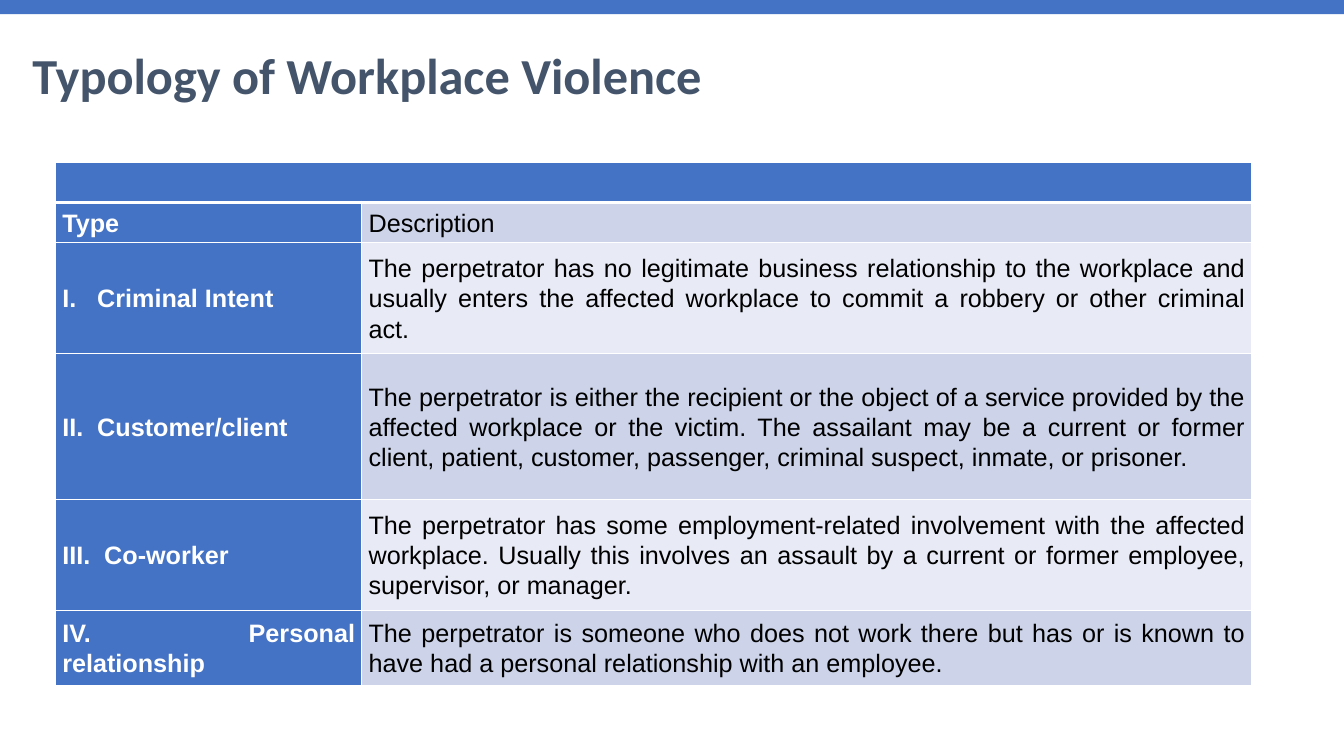
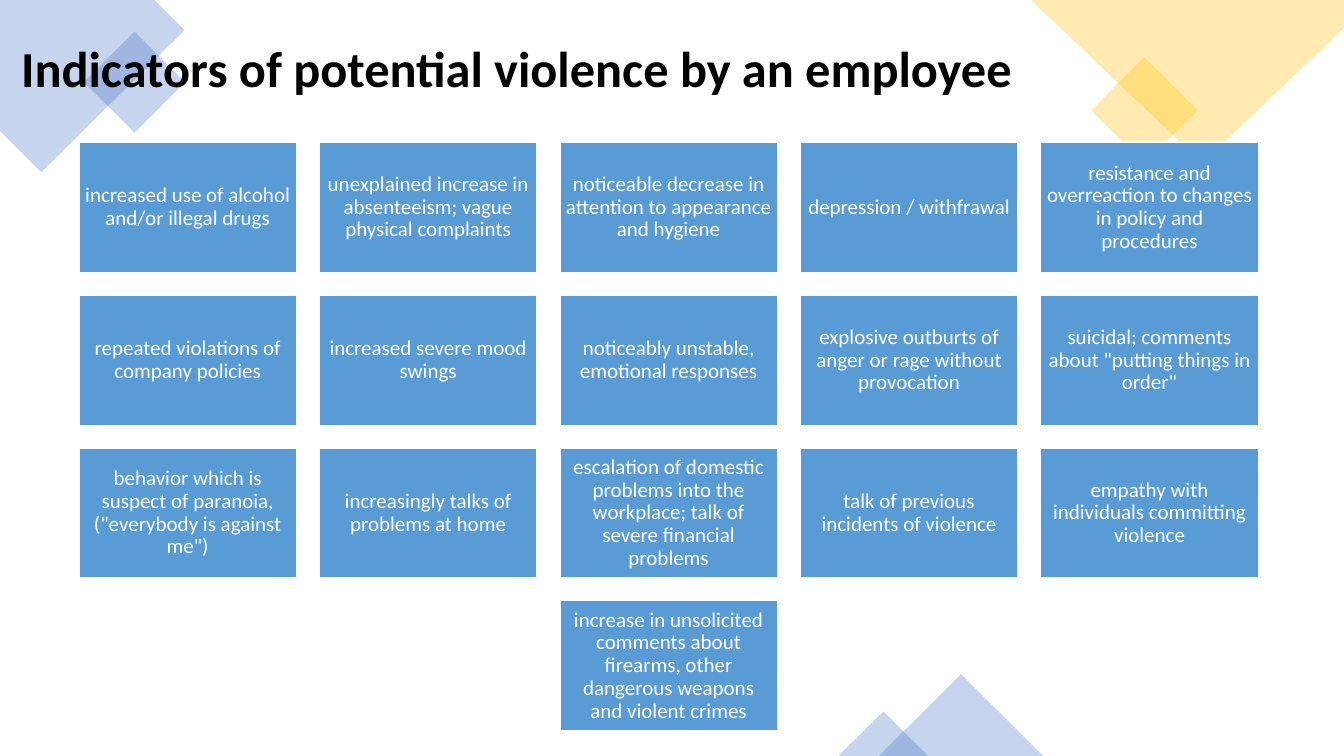
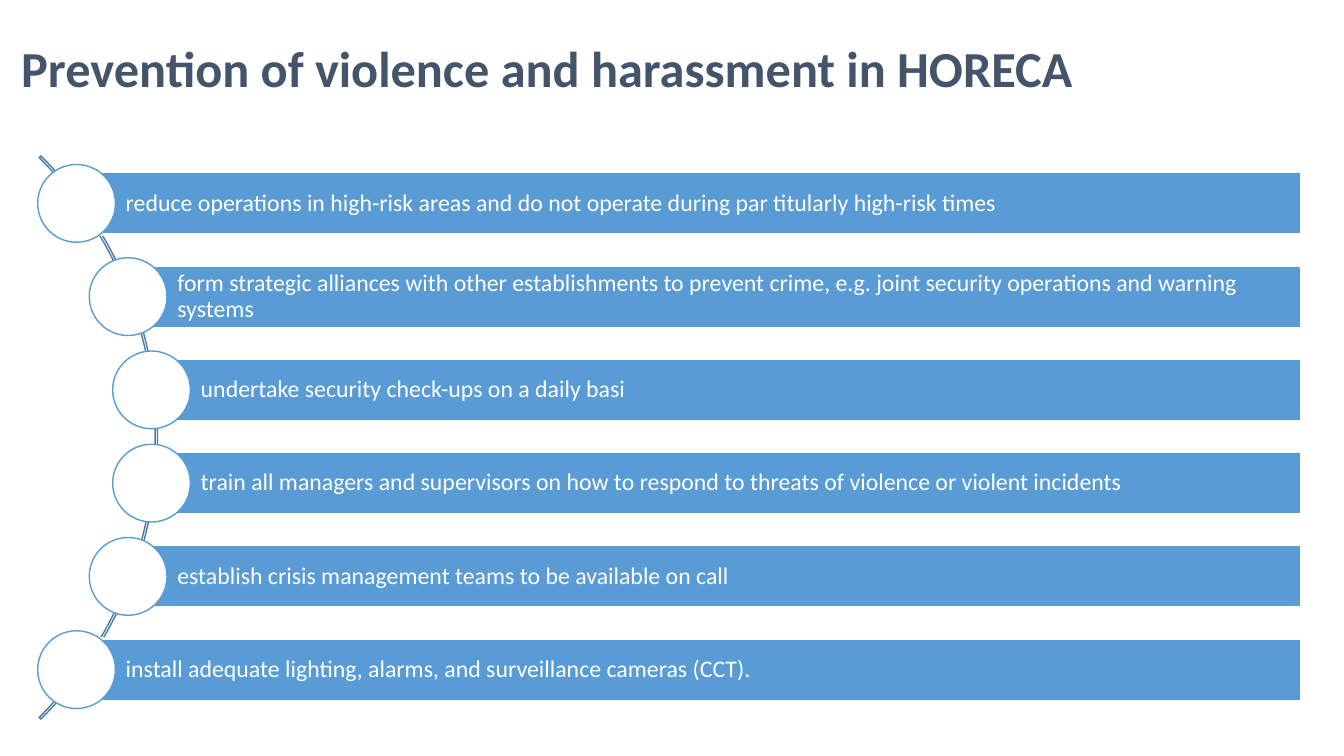
from lxml.etree import SubElement
from pptx import Presentation
from pptx.dml.color import RGBColor
from pptx.enum.shapes import MSO_SHAPE as Preset
from pptx.enum.text import MSO_ANCHOR as Anchor, MSO_AUTO_SIZE as AutoSize, PP_ALIGN as Align
from pptx.oxml.ns import qn
from pptx.util import Cm, Pt

BLUE = RGBColor(0x44, 0x72, 0xC4)
SKY = RGBColor(0x59, 0x9B, 0xD5)
STEEL = RGBColor(0x48, 0x7A, 0xA8)
SLATE = RGBColor(0x44, 0x54, 0x6A)
GOLD = RGBColor(0xFF, 0xC0, 0x00)
BAND_DARK = RGBColor(0xCD, 0xD4, 0xEA)
BAND_LIGHT = RGBColor(0xE8, 0xEB, 0xF5)
BLACK = RGBColor(0, 0, 0)
WHITE = RGBColor(0xFF, 0xFF, 0xFF)
SLIDE_W, SLIDE_H = 33.87, 19.05


def write(frame, text, size, color=WHITE, bold=False, font="Calibri", align=Align.LEFT, spacing=0.9):
    """Fill a text frame with one formatted paragraph."""
    frame.word_wrap = True
    paragraph = frame.paragraphs[0]
    paragraph.alignment = align
    paragraph.line_spacing = spacing
    run = paragraph.add_run()
    run.text = text
    run.font.name = font
    run.font.size = Pt(size)
    run.font.bold = bold
    run.font.color.rgb = color


def paint(shape, fill=None, line=None, width=1, opacity=100):
    """Set fill, outline and fill opacity (percent) and drop the shadow."""
    shape.shadow.inherit = False
    if fill is None:
        shape.fill.background()
    else:
        shape.fill.solid()
        shape.fill.fore_color.rgb = fill
    if opacity < 100:
        fill_color = shape._element.spPr.find(qn("a:solidFill"))[0]
        SubElement(fill_color, qn("a:alpha"), val=str(opacity * 1000))
    if line is None:
        shape.line.fill.background()
    else:
        shape.line.color.rgb = line
        shape.line.width = Pt(width)


deck = Presentation()
deck.slide_width, deck.slide_height = Cm(SLIDE_W), Cm(SLIDE_H)

# Titles
TITLE_BOX = (0.28, 0.23, 30.07, 3.12)
slides = []
for text, color, box, anchor in [
    ("Typology of Workplace Violence", SLATE, (0.56, 0.81, 30.99, 1.98), Anchor.BOTTOM),
    ("Indicators of potential violence by an employee", BLACK, TITLE_BOX, Anchor.MIDDLE),
    ("Prevention of violence and harassment in HORECA", SLATE, TITLE_BOX, Anchor.MIDDLE),
]:
    slide = deck.slides.add_slide(deck.slide_layouts[5])
    title = slide.shapes.title
    title.left, title.top, title.width, title.height = map(Cm, box)
    title.text_frame.auto_size = AutoSize.NONE
    title.text_frame.vertical_anchor = anchor
    write(title.text_frame, text, 36, color, bold=True)
    slides.append(slide)
typology, indicators, prevention = slides

# Typology: top band and table
top_band = typology.shapes.add_shape(Preset.RECTANGLE, 0, 0, Cm(SLIDE_W), Cm(0.36))
paint(top_band, BLUE)

types = [
    ("", "", 1.02),
    ("Type", "Description", 1.02),
    ("I.   Criminal Intent",
     "The perpetrator has no legitimate business relationship to the workplace and usually "
     "enters the affected workplace to commit a robbery or other criminal act.", 2.79),
    ("II.  Customer/client",
     "The perpetrator is either the recipient or the object of a service provided by the affected "
     "workplace or the victim. The assailant may be a current or former client, patient, customer, "
     "passenger, criminal suspect, inmate, or prisoner.", 3.68),
    ("III.  Co-worker",
     "The perpetrator has some employment-related involvement with the affected workplace. Usually "
     "this involves an assault by a current or former employee, supervisor, or manager.", 2.79),
    ("IV.  Personal relationship",
     "The perpetrator is someone who does not work there but has or is known to have had a personal "
     "relationship with an employee.", 1.9),
]
column_widths = (7.72, 22.43)
table = typology.shapes.add_table(
    len(types), 2, Cm(1.4), Cm(4.08), Cm(sum(column_widths)), Cm(sum(row[2] for row in types))
).table
for column, width in zip(table.columns, column_widths):
    column.width = Cm(width)

for r, (kind, description, height) in enumerate(types):
    table.rows[r].height = Cm(height)
    for c, text in enumerate((kind, description)):
        cell = table.cell(r, c)
        cell.margin_left = cell.margin_right = Cm(0.17)
        cell.margin_top = cell.margin_bottom = 0
        cell.vertical_anchor = Anchor.MIDDLE
        is_head = r == 0 or c == 0
        if text:
            write(cell.text_frame, text, 18, WHITE if is_head else BLACK, bold=is_head,
                  font="Arial", align=Align.JUSTIFY, spacing=1.07)
        properties = cell._tc.get_or_add_tcPr()
        for side in "LRTB":
            under_header = (r, side) in ((0, "B"), (1, "T"))
            border = SubElement(properties, qn(f"a:ln{side}"), w=str(Pt(3 if under_header else 1)))
            SubElement(SubElement(border, qn("a:solidFill")), qn("a:srgbClr"), val=str(WHITE))
        cell.fill.solid()
        cell.fill.fore_color.rgb = BLUE if is_head else BAND_DARK if r % 2 else BAND_LIGHT
table.cell(0, 0).merge(table.cell(0, 1))

# Indicators: corner decoration
corners = [
    (BLUE, [(3.89, 0), (0, 0), (0, 3.3), (1.04, 4.34), (4.65, 0.76)]),
    (GOLD, [(SLIDE_W, 0), (25.98, 0), (30.3, 4.11), (SLIDE_W, 0.71)]),
]
for color, outline in corners:
    points = [(Cm(x), Cm(y)) for x, y in outline]
    builder = indicators.shapes.build_freeform(*points[0])
    builder.add_line_segments(points[1:], close=True)
    paint(builder.convert_to_shape(), color, opacity=30)

for preset, color, rotation, box in [
    (Preset.RECTANGLE, BLUE, 315, (2.49, 1.17, 1.8, 1.8)),
    (Preset.RECTANGLE, GOLD, 315, (27.89, 1.83, 1.9, 1.9)),
    (Preset.ISOSCELES_TRIANGLE, BLUE, 0, (22.15, 16.99, 4.14, 2.06)),
    (Preset.ISOSCELES_TRIANGLE, BLUE, 0, (21.13, 17.93, 2.26, 1.12)),
]:
    accent = indicators.shapes.add_shape(preset, *map(Cm, box))
    accent.rotation = rotation
    paint(accent, color, opacity=30)

# The title lies above the decoration
indicators.shapes._spTree.append(indicators.shapes.title._element)

# Indicators: grid of signs, the last row centred
signs = [
    "increased use of alcohol and/or illegal drugs",
    "unexplained increase in absenteeism; vague physical complaints",
    "noticeable decrease in attention to appearance and hygiene",
    "depression / withfrawal",
    "resistance and overreaction to changes in policy and procedures",
    "repeated violations of company policies",
    "increased severe mood swings",
    "noticeably unstable, emotional responses",
    "explosive outburts of anger or rage without provocation",
    'suicidal; comments about "putting things in order"',
    'behavior which is suspect of paranoia, ("everybody is against me")',
    "increasingly talks of problems at home",
    "escalation of domestic problems into the workplace; talk of severe financial problems",
    "talk of previous incidents of violence",
    "empathy with individuals committing violence",
    "increase in unsolicited comments about firearms, other dangerous weapons and violent crimes",
]
PER_ROW, PITCH_X, PITCH_Y = 5, 6.06, 3.85
for i, sign in enumerate(signs):
    row, column = divmod(i, PER_ROW)
    in_row = min(PER_ROW, len(signs) - row * PER_ROW)
    left = 1.98 + (column + (PER_ROW - in_row) / 2) * PITCH_X
    tile = indicators.shapes.add_shape(
        Preset.RECTANGLE, Cm(left), Cm(3.58 + row * PITCH_Y), Cm(5.5), Cm(3.3))
    paint(tile, SKY, WHITE, 1.5)
    frame = tile.text_frame
    frame.margin_left = frame.margin_right = frame.margin_top = frame.margin_bottom = Cm(0.15)
    frame.vertical_anchor = Anchor.MIDDLE
    write(frame, sign, 15, align=Align.CENTER)

# Prevention: arc with bars and circles
arc = prevention.shapes.add_shape(Preset.BLOCK_ARC, Cm(-16.1), Cm(0.99), Cm(20.07), Cm(20.07))
for i, value in enumerate((189, 27, 0.003)):
    arc.adjustments[i] = value
paint(arc, line=STEEL)

measures = [
    (1.93, "reduce operations in high-risk areas and do not operate during par titularly high-risk times"),
    (3.23, "form strategic alliances with other establishments to prevent crime, "
           "e.g. joint security operations and warning systems"),
    (3.82, "undertake security check-ups on a daily basi"),
    (3.82, "train all managers and supervisors on how to respond to threats of violence or violent incidents"),
    (3.23, "establish crisis management teams to be available on call"),
    (1.93, "install adequate lighting, alarms, and surveillance cameras (CCT)."),
]
BAR_RIGHT, BAR_H, CIRCLE = 32.79, 1.57, 1.96
for i, (left, measure) in enumerate(measures):
    top = 4.34 + i * 2.35
    bar = prevention.shapes.add_shape(
        Preset.RECTANGLE, Cm(left), Cm(top), Cm(BAR_RIGHT - left), Cm(BAR_H))
    paint(bar, SKY, WHITE, 1.5)
    frame = bar.text_frame
    frame.margin_left = Cm(1.24)
    frame.margin_right = frame.margin_top = frame.margin_bottom = Cm(0.13)
    frame.vertical_anchor = Anchor.MIDDLE
    write(frame, measure, 17)
    circle = prevention.shapes.add_shape(
        Preset.OVAL, Cm(left - CIRCLE / 2), Cm(top + (BAR_H - CIRCLE) / 2), Cm(CIRCLE), Cm(CIRCLE))
    paint(circle, WHITE, SKY)

deck.save("out.pptx")
